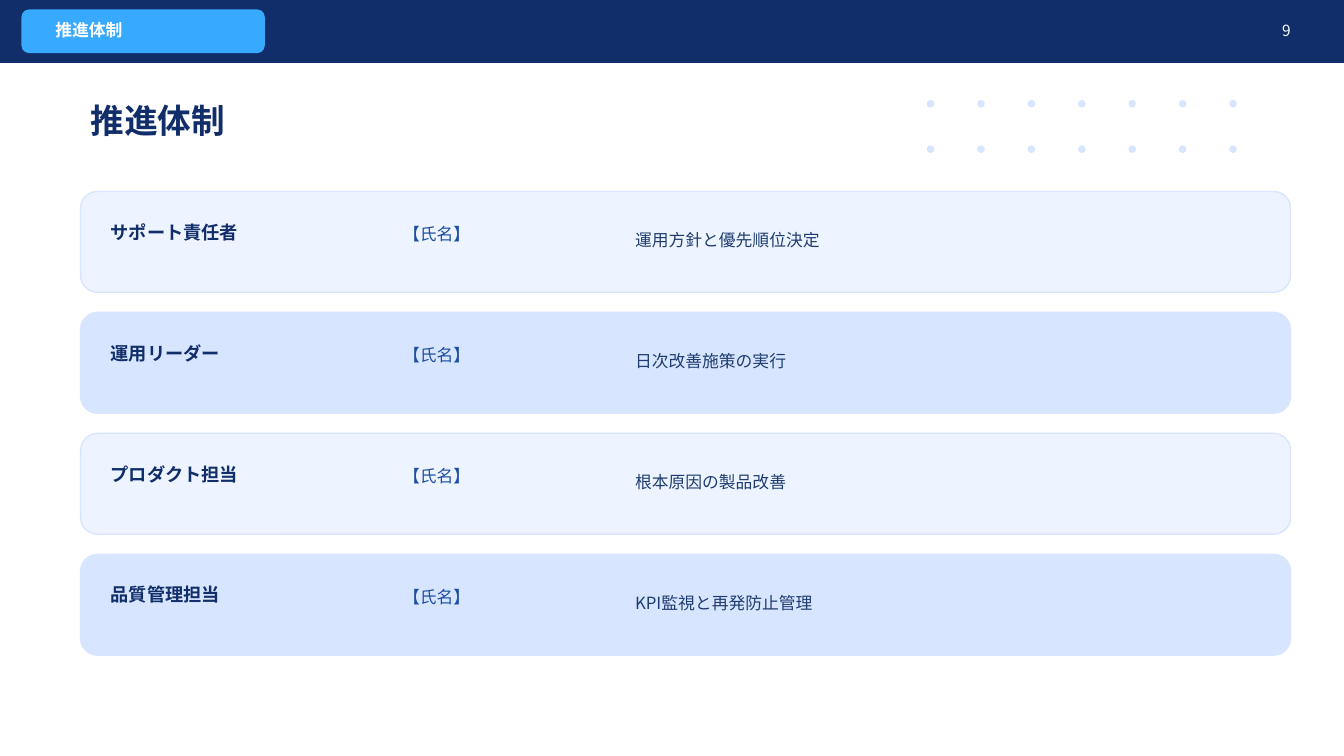
import pptx
import pptx.util
import pptx.dml.color
import pptx.enum.shapes
import pptx.enum.text
import lxml.etree
import pptx.oxml.ns

Inches = pptx.util.Inches
RGBColor = pptx.dml.color.RGBColor
Shape = pptx.enum.shapes.MSO_SHAPE
Align = pptx.enum.text.PP_ALIGN

NAVY = RGBColor(0x11, 0x2E, 0x6A)
SKY = RGBColor(0x37, 0xA9, 0xFF)
PALE = RGBColor(0xEE, 0xF4, 0xFF)
MIST = RGBColor(0xD8, 0xE5, 0xFF)
BLUE = RGBColor(0x1D, 0x4E, 0xA3)
SLATE = RGBColor(0x1F, 0x3C, 0x70)
WHITE = RGBColor(0xFF, 0xFF, 0xFF)
SANS = "Noto Sans CJK JP"

ROLES = [
    ("サポート責任者", "【氏名】", "運用方針と優先順位決定"),
    ("運用リーダー", "【氏名】", "日次改善施策の実行"),
    ("プロダクト担当", "【氏名】", "根本原因の製品改善"),
    ("品質管理担当", "【氏名】", "KPI監視と再発防止管理"),
]


def add_box(slide, kind, left, top, width, height, fill, edge):
    box = slide.shapes.add_shape(
        kind, Inches(left), Inches(top), Inches(width), Inches(height))
    box.shadow.inherit = False
    box.fill.solid()
    box.fill.fore_color.rgb = fill
    box.line.color.rgb = edge
    box.line.width = pptx.util.Pt(1)


def add_text(slide, text, left, top, width, height, size, color,
             bold=False, face=SANS, align=Align.LEFT):
    box = slide.shapes.add_textbox(
        Inches(left), Inches(top), Inches(width), Inches(height))
    frame = box.text_frame
    frame.word_wrap = True
    frame.vertical_anchor = pptx.enum.text.MSO_ANCHOR.MIDDLE
    para = frame.paragraphs[0]
    para.alignment = align
    run = para.add_run()
    run.text = text
    run.font.size = pptx.util.Pt(size)
    run.font.bold = bold
    run.font.color.rgb = color
    run.font.name = face
    # East Asian glyphs take their font from a separate element.
    asian = lxml.etree.SubElement(
        run.font._element, pptx.oxml.ns.qn("a:ea"))
    asian.set("typeface", face)


def add_dots(slide, left, top, cols, rows):
    for row in range(rows):
        for col in range(cols):
            add_box(slide, Shape.OVAL, left + 0.5 * col, top + 0.45 * row,
                    0.06, 0.06, MIST, MIST)


def add_header(slide, left, top, width, height, label, number):
    add_box(slide, Shape.RECTANGLE, left, top, width, height, NAVY, NAVY)
    add_box(slide, Shape.ROUNDED_RECTANGLE, left + 0.22, top + 0.1,
            2.4, height - 0.2, SKY, SKY)
    add_text(slide, label, left + 0.45, top + 0.18, 8.8, 0.24,
             12, WHITE, bold=True)
    add_text(slide, number, left + width - 1.18, top + 0.18, 0.75, 0.24,
             11, WHITE, align=Align.RIGHT)


def add_card(slide, left, top, width, height, fill, role, name, duty):
    add_box(slide, Shape.ROUNDED_RECTANGLE, left, top, width, height,
            fill, MIST)
    add_text(slide, role, left + 0.2, top + 0.28, 2.7, 0.24,
             13, NAVY, bold=True)
    add_text(slide, name, left + 3.1, top + 0.3, 2.1, 0.24, 12, BLUE)
    add_text(slide, duty, left + 5.4, top + 0.25, 6.2, 0.45, 12, SLATE)


def main():
    deck = pptx.Presentation()
    deck.slide_width = Inches(13.33)
    deck.slide_height = Inches(7.5)
    slide = deck.slides.add_slide(deck.slide_layouts[6])
    add_dots(slide, 9.2, 1, cols=7, rows=2)
    add_header(slide, 0, 0, 13.33, 0.62, "推進体制", "9")
    add_text(slide, "推進体制", 0.8, 0.95, 11.4, 0.48, 24, NAVY,
             bold=True, face="Lato")
    for index, texts in enumerate(ROLES):
        fill = MIST if index % 2 else PALE
        add_card(slide, 0.8, 1.9 + 1.2 * index, 12, 1, fill, *texts)
    deck.save("out.pptx")


if __name__ == "__main__":
    main()
